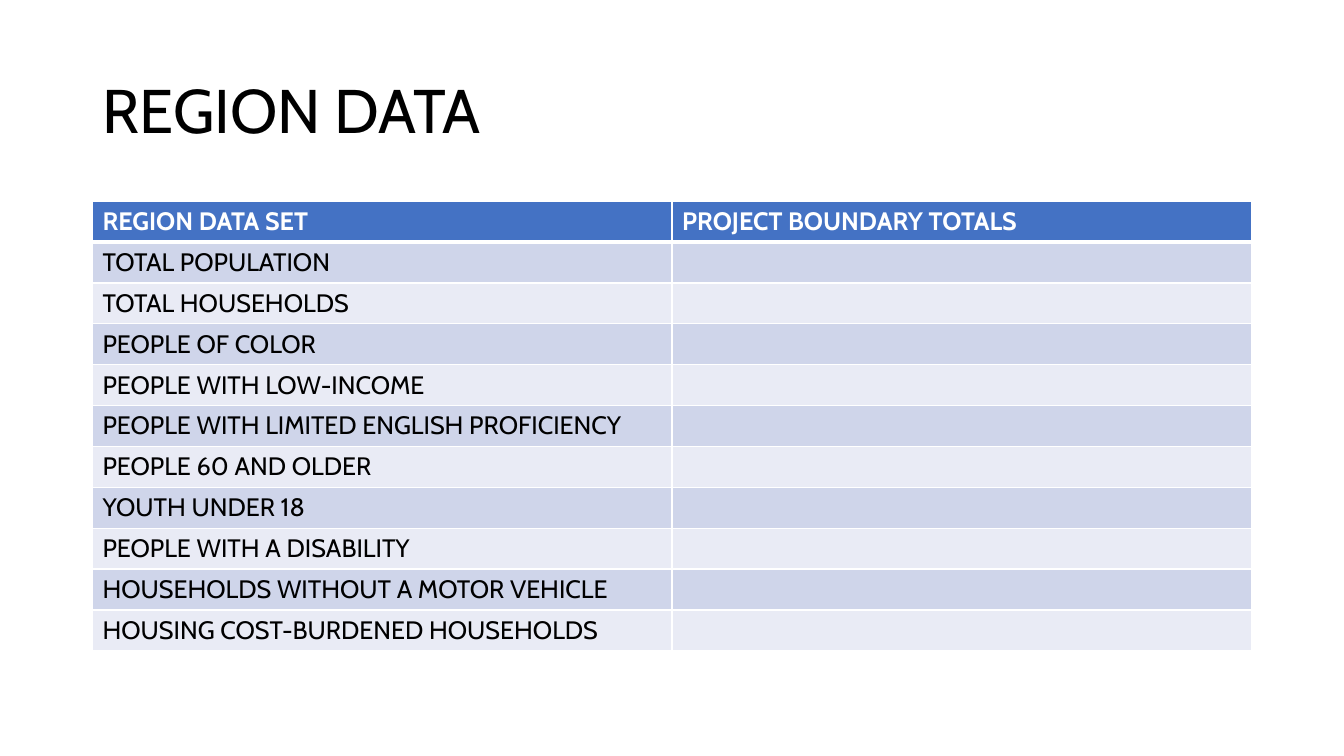
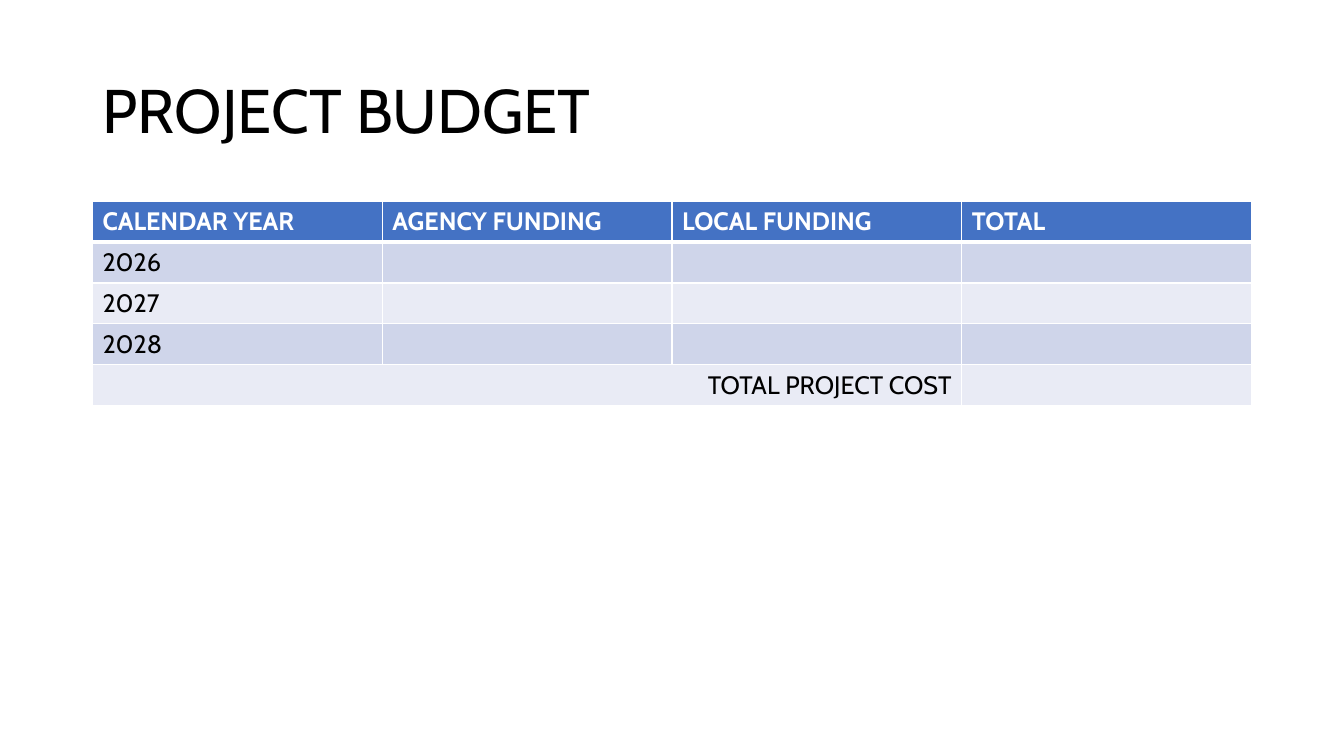
"""Build two slides, each with a title and a banded table."""
from lxml.etree import SubElement
from pptx import Presentation
from pptx.dml.color import RGBColor
from pptx.enum.text import MSO_ANCHOR, MSO_AUTO_SIZE, PP_ALIGN
from pptx.oxml.ns import qn
from pptx.util import Cm, Pt

FONT = "Cabin"
BLACK, WHITE, HEADER_BLUE = "000000", "FFFFFF", "4472C4"
BAND_COLORS = ["E9EBF5", "CFD5EA"]
LEFT, WIDTH, ROW_HEIGHT = Cm(2.33), Cm(29.21), Cm(1.03)


def add_text(paragraph, text, size, color, bold=False):
    run = paragraph.add_run()
    run.text = text
    run.font.name = FONT
    run.font.size = Pt(size)
    run.font.bold = bold
    run.font.color.rgb = RGBColor.from_string(color)


def set_borders(cell, widths):
    properties = cell._tc.get_or_add_tcPr()
    for position, (side, width) in enumerate(widths.items()):
        line = properties.makeelement(qn(f"a:ln{side}"), {"w": str(Pt(width))})
        SubElement(SubElement(line, qn("a:solidFill")), qn("a:srgbClr"), val=WHITE)
        properties.insert(position, line)


presentation = Presentation()
presentation.slide_width = Cm(33.87)
presentation.slide_height = Cm(19.05)

slides = [
    ("REGION DATA", ["REGION DATA SET", "PROJECT BOUNDARY TOTALS"], [
        "TOTAL POPULATION",
        "TOTAL HOUSEHOLDS",
        "PEOPLE OF COLOR",
        "PEOPLE WITH LOW-INCOME",
        "PEOPLE WITH LIMITED ENGLISH PROFICIENCY",
        "PEOPLE 60 AND OLDER",
        "YOUTH UNDER 18",
        "PEOPLE WITH A DISABILITY",
        "HOUSEHOLDS WITHOUT A MOTOR VEHICLE",
        "HOUSING COST-BURDENED HOUSEHOLDS",
    ]),
    ("PROJECT BUDGET", ["CALENDAR YEAR", "AGENCY FUNDING", "LOCAL FUNDING", "TOTAL"],
     ["2026", "2027", "2028", "TOTAL PROJECT COST"]),
]

for title_text, headings, labels in slides:
    slide = presentation.slides.add_slide(presentation.slide_layouts[5])
    title = slide.shapes.title
    title.left, title.top, title.width, title.height = LEFT, Cm(1.01), WIDTH, Cm(3.68)
    title.text_frame.auto_size = MSO_AUTO_SIZE.NONE
    title.text_frame.vertical_anchor = MSO_ANCHOR.MIDDLE
    paragraph = title.text_frame.paragraphs[0]
    paragraph.alignment = PP_ALIGN.LEFT
    paragraph.line_spacing = 0.9
    add_text(paragraph, title_text, 44, BLACK)

    row_count = len(labels) + 1
    table = slide.shapes.add_table(
        row_count, len(headings), LEFT, Cm(5.07), WIDTH, ROW_HEIGHT * row_count
    ).table

    for row_index in range(row_count):
        is_header = row_index == 0
        texts = headings if is_header else [labels[row_index - 1]]
        fill_color = HEADER_BLUE if is_header else BAND_COLORS[row_index % 2]
        widths = {"L": 1, "R": 1, "T": 3 if row_index == 1 else 1, "B": 3 if is_header else 1}
        for column_index in range(len(headings)):
            cell = table.cell(row_index, column_index)
            cell.fill.solid()
            cell.fill.fore_color.rgb = RGBColor.from_string(fill_color)
            set_borders(cell, widths)
            if column_index < len(texts):
                add_text(cell.text_frame.paragraphs[0], texts[column_index], 18,
                         WHITE if is_header else BLACK, is_header)

budget_total = table.cell(row_count - 1, 0)
budget_total.merge(table.cell(row_count - 1, 2))
budget_total.text_frame.paragraphs[0].alignment = PP_ALIGN.RIGHT

presentation.save("out.pptx")
